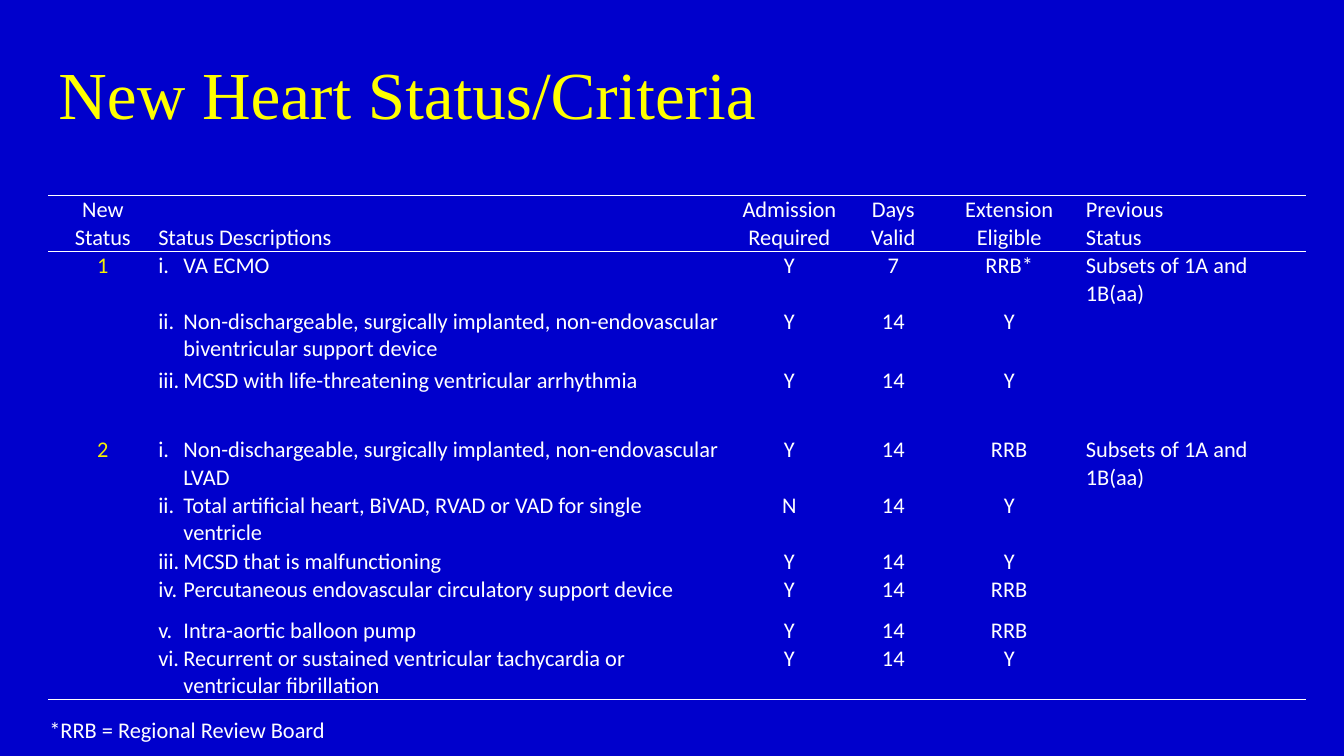
"""Build the heart status criteria slide."""
from dataclasses import dataclass

from lxml import etree
from pptx import Presentation
from pptx.dml.color import RGBColor
from pptx.enum.text import MSO_ANCHOR, PP_ALIGN
from pptx.oxml.ns import qn
from pptx.util import Inches, Pt

CENTER, LEFT = PP_ALIGN.CENTER, PP_ALIGN.LEFT
TOP, MIDDLE, BOTTOM = MSO_ANCHOR.TOP, MSO_ANCHOR.MIDDLE, MSO_ANCHOR.BOTTOM
COLORS = {"background": "0000CC", "title": "FFFF00", "status": "F8F200", "text": "FFFFFF"}
COLUMN_WIDTHS = [1.08, 5.64, 1.26, 0.8, 1.5, 2.19]
ALIGNMENTS = [CENTER, LEFT, CENTER, CENTER, CENTER, LEFT]
HEADER = ["New\nStatus", "Status Descriptions", "Admission\nRequired",
          "Days\nValid", "Extension\nEligible", "Previous\nStatus"]
HEADER_HEIGHT, GAP_HEIGHT, FOOTNOTE_HEIGHT = 0.4, 0.27, 0.44
FOOTNOTE = "*RRB = Regional Review Board"


@dataclass
class Criterion:
    """One qualifying condition and its listing terms."""
    description: str
    admission: str
    days: str
    extension: str
    height: float


@dataclass
class Status:
    """A status with its numbered criteria."""
    name: str
    previous: str
    criteria: list[Criterion]


STATUSES = [
    Status("1", "Subsets of 1A and 1B(aa)", [
        Criterion("VA ECMO", "Y", "7", "RRB*", 0.4),
        Criterion("Non-dischargeable, surgically implanted, non-endovascular "
                  "biventricular support device", "Y", "14", "Y", 0.59),
        Criterion("MCSD with life-threatening ventricular arrhythmia", "Y", "14", "Y", 0.4),
    ]),
    Status("2", "Subsets of 1A and 1B(aa)", [
        Criterion("Non-dischargeable, surgically implanted, non-endovascular LVAD",
                  "Y", "14", "RRB", 0.43),
        Criterion("Total artificial heart, BiVAD, RVAD or VAD for single ventricle",
                  "N", "14", "Y", 0.4),
        Criterion("MCSD that is malfunctioning", "Y", "14", "Y", 0.24),
        Criterion("Percutaneous endovascular circulatory support device",
                  "Y", "14", "RRB", 0.4),
        Criterion("Intra-aortic balloon pump", "Y", "14", "RRB", 0.24),
        Criterion("Recurrent or sustained ventricular tachycardia or ventricular fibrillation",
                  "Y", "14", "Y", 0.44),
    ]),
]


def write_text(frame, text: str, *, size: float = 16, font: str = "Calibri",
               color: str = "text", align=LEFT, number: int = 0) -> None:
    """Write formatted paragraphs, numbered in roman when a number is given."""
    frame.word_wrap = True
    for index, line in enumerate(text.split("\n")):
        paragraph = frame.paragraphs[0] if index == 0 else frame.add_paragraph()
        paragraph.alignment = align
        if not line:
            etree.SubElement(paragraph._p, qn("a:endParaRPr"), sz=str(int(size * 100)))
            continue
        run = paragraph.add_run()
        run.text = line
        run.font.size = Pt(size)
        run.font.name = font
        run.font.color.rgb = RGBColor.from_string(COLORS[color])
        if number:
            properties = paragraph._p.get_or_add_pPr()
            properties.set("marL", str(Inches(0.25)))
            properties.set("indent", str(Inches(-0.25)))
            etree.SubElement(properties, qn("a:buAutoNum"),
                             type="romanLcPeriod", startAt=str(number))


def format_cell(cell, anchor, ruled: str) -> None:
    """Set margins, anchor and the ruled sides of a clear cell."""
    cell.margin_left = cell.margin_right = cell.margin_top = Inches(0.01)
    cell.margin_bottom = 0
    cell.vertical_anchor = anchor
    properties = cell._tc.get_or_add_tcPr()
    for side in "LRTB":
        line = etree.SubElement(properties, qn(f"a:ln{side}"), w=str(Pt(1)))
        if side in ruled:
            fill = etree.SubElement(line, qn("a:solidFill"))
            etree.SubElement(fill, qn("a:srgbClr"), val=COLORS["text"])
        else:
            etree.SubElement(line, qn("a:noFill"))
    cell.fill.background()


def table_rows() -> list[tuple[float, list[str], int]]:
    """Return the height, texts and criterion number of every row."""
    blank = [""] * len(HEADER)
    rows = [(HEADER_HEIGHT, HEADER, 0)]
    for status in STATUSES:
        if status is not STATUSES[0]:
            rows.append((GAP_HEIGHT, blank, 0))
        for number, item in enumerate(status.criteria, 1):
            name, previous = (status.name, status.previous) if number == 1 else ("", "")
            rows.append((item.height, [name, item.description, item.admission,
                                       item.days, item.extension, previous], number))
    rows.append((FOOTNOTE_HEIGHT, [FOOTNOTE] + blank[1:], 0))
    return rows


def add_criteria_table(slide) -> None:
    """Add the criteria table with its header and footnote."""
    rows = table_rows()
    last = len(rows) - 1
    shape = slide.shapes.add_table(len(rows), len(HEADER), Inches(0.48), Inches(1.94),
                                   Inches(12.47), Inches(5.35))
    table = shape.table
    table.first_row = table.horz_banding = False
    for column, width in zip(table.columns, COLUMN_WIDTHS):
        column.width = Inches(width)
    rules = {0: "TB", 1: "T", last - 1: "B", last: "T"}
    for row_index, (height, texts, number) in enumerate(rows):
        table.rows[row_index].height = Inches(height)
        anchor = BOTTOM if row_index in (0, last) else TOP
        for column_index, text in enumerate(texts):
            cell = table.cell(row_index, column_index)
            format_cell(cell, anchor, rules.get(row_index, ""))
            write_text(cell.text_frame, text,
                       color="status" if number and column_index == 0 else "text",
                       align=LEFT if row_index == last else ALIGNMENTS[column_index],
                       number=number if column_index == 1 else 0)
    table.cell(last, 0).merge(table.cell(last, len(HEADER) - 1))
    shape.height = Inches(5.35)


def main() -> None:
    """Create and save the presentation."""
    presentation = Presentation()
    presentation.slide_width, presentation.slide_height = Inches(13.33), Inches(7.5)
    slide = presentation.slides.add_slide(presentation.slide_layouts[5])
    background = slide.background.fill
    background.solid()
    background.fore_color.rgb = RGBColor.from_string(COLORS["background"])
    title = slide.shapes.title
    title.left, title.top = Inches(0.48), Inches(0.29)
    title.width, title.height = Inches(11.33), Inches(1.25)
    title.text_frame.vertical_anchor = MIDDLE
    write_text(title.text_frame, "New Heart Status/Criteria", size=48,
               font="Times New Roman", color="title")
    add_criteria_table(slide)
    presentation.save("out.pptx")


if __name__ == "__main__":
    main()
